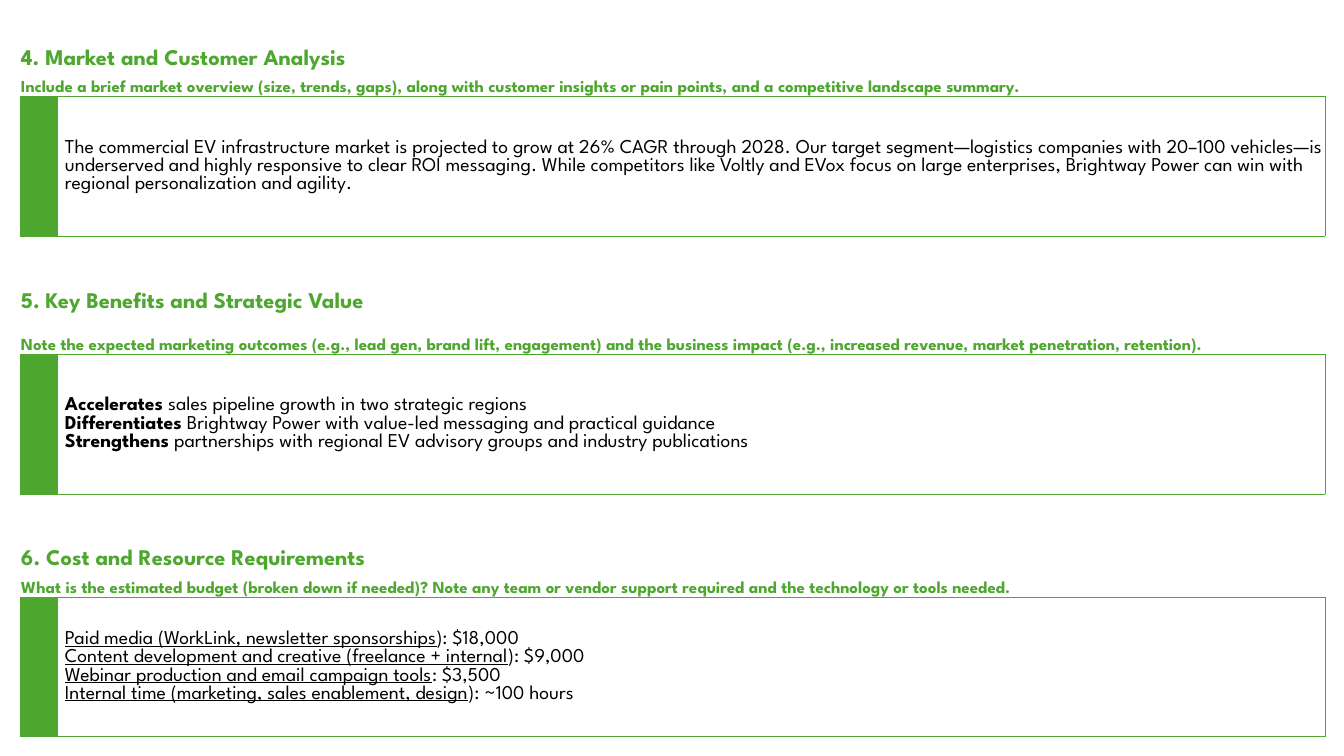
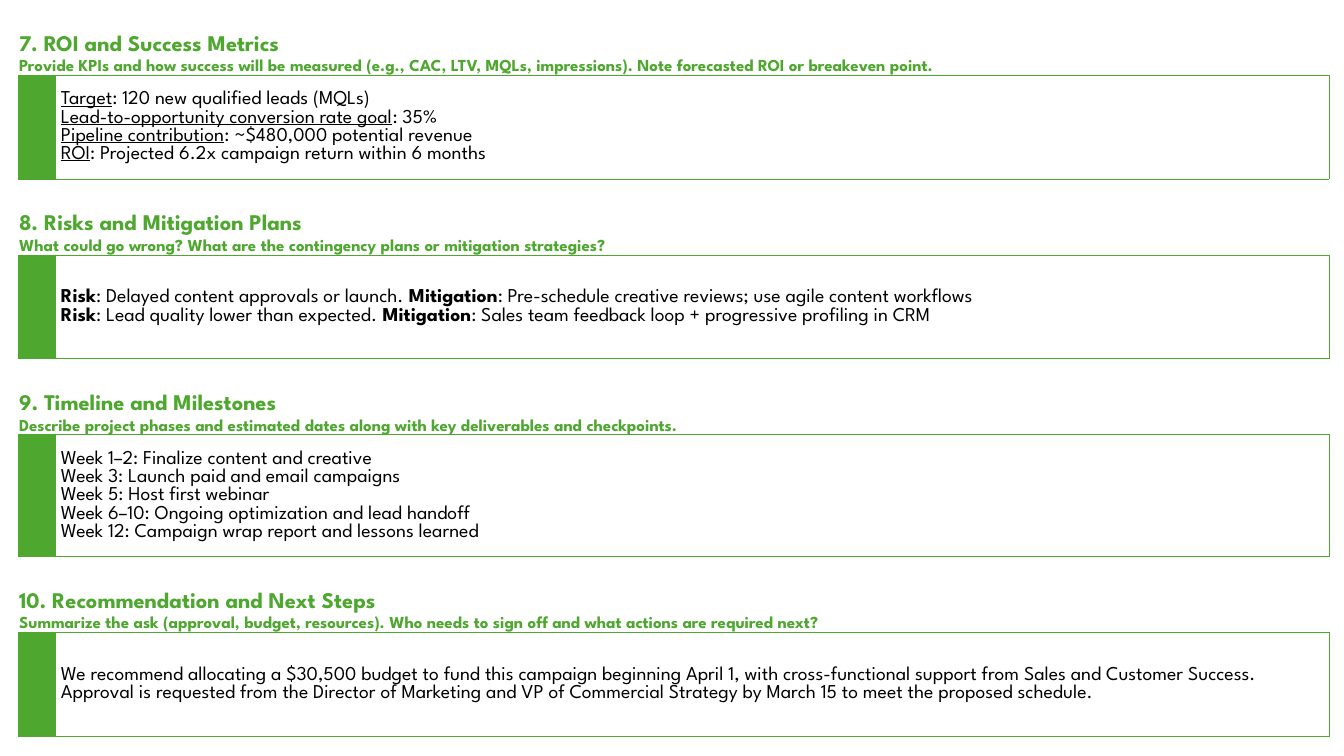
from dataclasses import dataclass

from lxml import etree
from pptx import Presentation
from pptx.dml.color import RGBColor
from pptx.enum.text import MSO_ANCHOR
from pptx.oxml.ns import qn
from pptx.util import Pt

BOTTOM, MIDDLE = MSO_ANCHOR.BOTTOM, MSO_ANCHOR.MIDDLE
EMU_PER_PX = 914400 / 100.8
PLAIN_TABLE = "{2D5ABB26-0587-4C30-8999-92F81FD0307C}"


@dataclass(frozen=True)
class Theme:
    font: str = "League Spartan"
    accent: str = "4EA72E"
    ink: str = "000000"
    title: int = 16
    prompt: int = 12
    body: int = 14
    empty: int = 8
    border: float = 0.5


@dataclass(frozen=True)
class Section:
    """Text between asterisks in a line is emphasized."""
    title: str
    prompt: str
    lines: tuple
    underline: bool = False
    prompt_h: int = 0
    body_h: int = 0


@dataclass(frozen=True)
class Grid:
    left: int
    top: int
    cols: tuple
    title_h: int
    prompt_h: int
    body_h: int
    gap_h: int
    indent: int


THEME = Theme()

MARKET_GRID = Grid(20, 23, (37, 634, 634), 47, 26, 140, 30, 8)
MARKET_SECTIONS = (
    Section(
        "4. Market and Customer Analysis",
        "Include a brief market overview (size, trends, gaps), along with customer insights "
        "or pain points, and a competitive landscape summary.",
        ("The commercial EV infrastructure market is projected to grow at 26% CAGR through "
         "2028. Our target segment—logistics companies with 20–100 vehicles—is underserved "
         "and highly responsive to clear ROI messaging. While competitors like Voltly and "
         "EVox focus on large enterprises, Brightway Power can win with regional "
         "personalization and agility.",)),
    Section(
        "5. Key Benefits and Strategic Value",
        "Note the expected marketing outcomes (e.g., lead gen, brand lift, engagement) and "
        "the business impact (e.g., increased revenue, market penetration, retention).",
        ("*Accelerates* sales pipeline growth in two strategic regions",
         "*Differentiates* Brightway Power with value-led messaging and practical guidance",
         "*Strengthens* partnerships with regional EV advisory groups and industry "
         "publications"),
        prompt_h=41),
    Section(
        "6. Cost and Resource Requirements",
        "What is the estimated budget (broken down if needed)? Note any team or vendor "
        "support required and the technology or tools needed.",
        ("*Paid media (WorkLink, newsletter sponsorships*): $18,000",
         "*Content development and creative (freelance + internal*): $9,000",
         "*Webinar production and email campaign tools*: $3,500",
         "*Internal time (marketing, sales enablement, design*): ~100 hours"),
        underline=True),
)

DELIVERY_GRID = Grid(18, 22, (37, 637, 637), 34, 19, 104, 23, 6)
DELIVERY_SECTIONS = (
    Section(
        "7. ROI and Success Metrics",
        "Provide KPIs and how success will be measured (e.g., CAC, LTV, MQLs, impressions). "
        "Note forecasted ROI or breakeven point.",
        ("*Target*: 120 new qualified leads (MQLs)",
         "*Lead-to-opportunity conversion rate goal*: 35%",
         "*Pipeline contribution*: ~$480,000 potential revenue",
         "*ROI*: Projected 6.2x campaign return within 6 months"),
        underline=True),
    Section(
        "8. Risks and Mitigation Plans",
        "What could go wrong? What are the contingency plans or mitigation strategies?",
        ("*Risk*: Delayed content approvals or launch. *Mitigation*: Pre-schedule creative "
         "reviews; use agile content workflows",
         "*Risk*: Lead quality lower than expected. *Mitigation*: Sales team feedback loop "
         "+ progressive profiling in CRM")),
    Section(
        "9. Timeline and Milestones",
        "Describe project phases and estimated dates along with key deliverables and "
        "checkpoints.",
        ("Week 1–2: Finalize content and creative",
         "Week 3: Launch paid and email campaigns",
         "Week 5: Host first webinar",
         "Week 6–10: Ongoing optimization and lead handoff",
         "Week 12: Campaign wrap report and lessons learned"),
        body_h=122),
    Section(
        "10. Recommendation and Next Steps",
        "Summarize the ask (approval, budget, resources). Who needs to sign off and what "
        "actions are required next?",
        ("We recommend allocating a $30,500 budget to fund this campaign beginning April 1, "
         "with cross-functional support from Sales and Customer Success. Approval is "
         "requested from the Director of Marketing and VP of Commercial Strategy by "
         "March 15 to meet the proposed schedule.",)),
)


def px(n):
    return round(n * EMU_PER_PX)


def set_borders(cell, sides):
    """Draw accent lines on the given sides, named in L, R, T, B order."""
    tcPr = cell._tc.get_or_add_tcPr()
    for i, side in enumerate(sides):
        ln = etree.Element(qn(f"a:ln{side}"), w=str(Pt(THEME.border)))
        fill = etree.SubElement(ln, qn("a:solidFill"))
        etree.SubElement(fill, qn("a:srgbClr"), val=THEME.accent)
        tcPr.insert(i, ln)


def style_paragraph(p, size, color=THEME.ink, bold=False):
    p.font.name = THEME.font
    p.font.size = Pt(size)
    p.font.bold = bold
    p.font.color.rgb = RGBColor.from_string(color)


def clear_cell(cell):
    cell.fill.background()
    cell.margin_left = cell.margin_right = cell.margin_top = px(1)
    cell.margin_bottom = 0
    style_paragraph(cell.text_frame.paragraphs[0], THEME.empty)


def fill_heading(cell, text, size):
    cell.vertical_anchor = BOTTOM
    p = cell.text_frame.paragraphs[0]
    p.add_run().text = text
    style_paragraph(p, size, THEME.accent, bold=True)


def fill_body(cell, section, indent):
    cell.vertical_anchor = MIDDLE
    cell.margin_left = px(indent)
    tf = cell.text_frame
    for i, line in enumerate(section.lines):
        p = tf.add_paragraph() if i else tf.paragraphs[0]
        style_paragraph(p, THEME.body)
        for j, text in enumerate(line.split("*")):
            if not text:
                continue
            r = p.add_run()
            r.text = text
            if j % 2 and section.underline:
                r.font.underline = True
            elif j % 2:
                r.font.bold = True


def add_section(table, row, section, grid):
    """Fill the title, prompt and body rows that start at row."""
    title, prompt, body = ([table.cell(row + i, c) for c in range(3)] for i in range(3))
    title[0].merge(title[1])
    fill_heading(title[0], section.title, THEME.title)

    prompt[0].merge(prompt[2])
    fill_heading(prompt[0], section.prompt, THEME.prompt)
    for cell in prompt:
        set_borders(cell, "B")

    body[1].merge(body[2])
    for cell in body:
        set_borders(cell, "LRTB")
    body[0].fill.solid()
    body[0].fill.fore_color.rgb = RGBColor.from_string(THEME.accent)
    fill_body(body[1], section, grid.indent)


def add_section_slide(prs, grid, sections):
    s = prs.slides.add_slide(prs.slide_layouts[6])
    heights = []
    for section in sections:
        heights += [grid.title_h, section.prompt_h or grid.prompt_h,
                    section.body_h or grid.body_h, grid.gap_h]
    heights.pop()
    frame = s.shapes.add_table(len(heights), len(grid.cols), px(grid.left), px(grid.top),
                               px(sum(grid.cols)), px(sum(heights)))
    table = frame.table
    table.first_row = table.horz_banding = False
    table._tbl.tblPr.find(qn("a:tableStyleId")).text = PLAIN_TABLE
    for column, width in zip(table.columns, grid.cols):
        column.width = px(width)
    for row, height in zip(table.rows, heights):
        row.height = px(height)
    for cell in table.iter_cells():
        clear_cell(cell)
    for i, section in enumerate(sections):
        add_section(table, 4 * i, section, grid)


def main():
    prs = Presentation()
    prs.slide_width, prs.slide_height = px(1344), px(756)
    add_section_slide(prs, MARKET_GRID, MARKET_SECTIONS)
    add_section_slide(prs, DELIVERY_GRID, DELIVERY_SECTIONS)
    prs.save("out.pptx")


if __name__ == "__main__":
    main()
